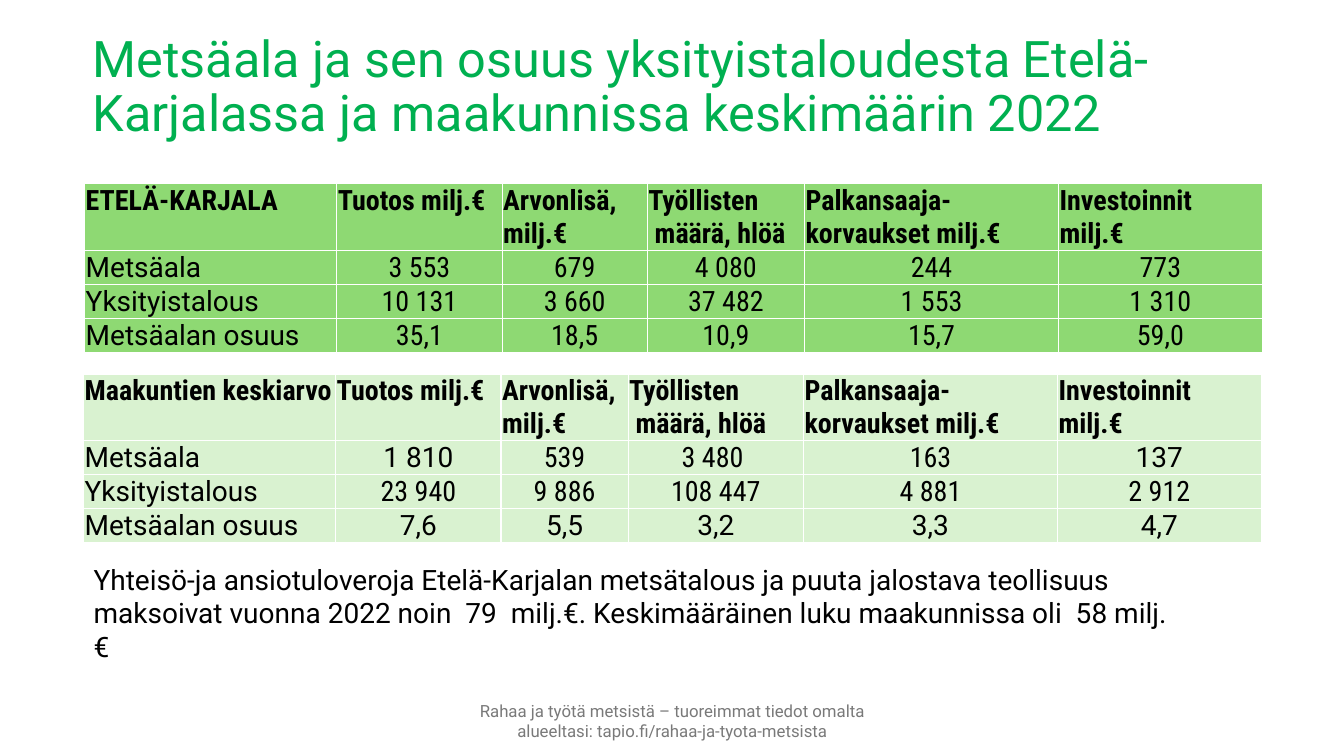
from lxml.etree import SubElement
from pptx import Presentation
from pptx.dml.color import RGBColor
from pptx.enum.text import MSO_ANCHOR, MSO_AUTO_SIZE, PP_ALIGN
from pptx.oxml.ns import qn
from pptx.util import Inches, Pt

COLORS = {
    "title": "00B050",
    "text": "000000",
    "footer": "797979",
    "border": "FFFFFF",
    "region": "8ED973",
    "average": "D9F2D0",
}
REGULAR = "Roboto"
CONDENSED = "Roboto Condensed"

HEADINGS = ["Tuotos milj.€", "Arvonlisä, milj.€", "Työllisten\n määrä, hlöä",
            "Palkansaaja-korvaukset milj.€", "Investoinnit\nmilj.€"]
REGION_ROWS = [
    ["ETELÄ-KARJALA", *HEADINGS],
    ["Metsäala", "3 553", "679", "4 080", "244", "773"],
    ["Yksityistalous", "10 131", "3 660", "37 482", "1 553", "1 310"],
    ["Metsäalan osuus", "35,1", "18,5", "10,9", "15,7", "59,0"],
]
AVERAGE_ROWS = [
    ["Maakuntien keskiarvo", *HEADINGS],
    ["Metsäala", "1 810", "539", "3 480 ", "163", "137"],
    ["Yksityistalous", "23 940", "9 886", "108 447", "4 881", "2 912"],
    ["Metsäalan osuus", "7,6", "5,5", "3,2", "3,3", "4,7"],
]
# Value cells (row, column) set in the regular width
AVERAGE_REGULAR = {(1, 1), (1, 5)} | {(3, column) for column in range(1, 6)}


class SlideBuilder:
    """Holds the style and the current slide."""

    def __init__(self, presentation):
        self.slide = presentation.slides.add_slide(presentation.slide_layouts[5])

    def fill_text(self, frame, text, color, size=20, name=REGULAR, bold=False,
                  **paragraph_format):
        frame.text = text
        font_format = {"size": Pt(size), "name": name, "bold": bold}
        for paragraph in frame.paragraphs:
            for key, value in paragraph_format.items():
                setattr(paragraph, key, value)
            for run in paragraph.runs:
                for key, value in font_format.items():
                    setattr(run.font, key, value)
                run.font.color.rgb = RGBColor.from_string(COLORS[color])

    def place(self, shape, left, top, width, height):
        position = {"left": left, "top": top, "width": width, "height": height}
        for key, value in position.items():
            setattr(shape, key, Inches(value))

    def title(self, text, box):
        shape = self.slide.shapes.title
        self.place(shape, *box)
        frame = shape.text_frame
        self.fill_text(frame, text, "title", size=36, alignment=PP_ALIGN.LEFT,
                       line_spacing=0.9)
        frame_format = {"word_wrap": True, "auto_size": MSO_AUTO_SIZE.NONE,
                        "vertical_anchor": MSO_ANCHOR.MIDDLE}
        for key, value in frame_format.items():
            setattr(frame, key, value)

    def text(self, text, box, color, size=20, alignment=PP_ALIGN.LEFT,
             anchor=MSO_ANCHOR.TOP):
        shape = self.slide.shapes.add_textbox(*map(Inches, box))
        frame = shape.text_frame
        frame.word_wrap = True
        frame.vertical_anchor = anchor
        self.fill_text(frame, text, color, size=size, alignment=alignment)

    def border(self, cell):
        properties = cell._tc.get_or_add_tcPr()
        for side in ("lnL", "lnR", "lnT", "lnB"):
            line = SubElement(properties, qn(f"a:{side}"), w=str(Pt(1)))
            fill = SubElement(line, qn("a:solidFill"))
            SubElement(fill, qn("a:srgbClr"), val=COLORS["border"])

    def cell(self, cell, text, fill, **text_format):
        self.border(cell)
        cell.fill.solid()
        cell.fill.fore_color.rgb = RGBColor.from_string(COLORS[fill])
        margins = {"margin_left": 0.01, "margin_top": 0.01,
                   "margin_right": 0.01, "margin_bottom": 0}
        for key, value in margins.items():
            setattr(cell, key, Inches(value))
        self.fill_text(cell.text_frame, text, "text", **text_format)

    def table(self, rows, left, top, widths, fill, regular_cells=frozenset()):
        heights = [0.66] + [0.33] * (len(rows) - 1)
        table = self.slide.shapes.add_table(
            len(rows), len(widths), Inches(left), Inches(top),
            Inches(sum(widths)), Inches(sum(heights))).table
        table.first_row = table.horz_banding = False
        for column, width in zip(table.columns, widths):
            column.width = Inches(width)
        for row, height in zip(table.rows, heights):
            row.height = Inches(height)
        for i, values in enumerate(rows):
            for j, value in enumerate(values):
                cell = table.cell(i, j)
                is_header, is_label = i == 0, j == 0
                is_regular = (i, j) in regular_cells or (is_label and not is_header)
                cell.vertical_anchor = MSO_ANCHOR.TOP if is_header else MSO_ANCHOR.BOTTOM
                self.cell(
                    cell, value, fill, bold=is_header,
                    name=REGULAR if is_regular else CONDENSED,
                    alignment=PP_ALIGN.LEFT if is_header or is_label else PP_ALIGN.CENTER)


def main():
    presentation = Presentation()
    presentation.slide_width = Inches(13.33)
    presentation.slide_height = Inches(7.5)
    builder = SlideBuilder(presentation)

    # Title
    builder.title("Metsäala ja sen osuus yksityistaloudesta Etelä-Karjalassa "
                  "ja maakunnissa keskimäärin 2022", (0.82, 0.15, 12.19, 1.45))

    # Region and average of the regions
    builder.table(REGION_ROWS, 0.84, 1.82, [2.5, 1.64, 1.44, 1.56, 2.52, 2.02], "region")
    builder.table(AVERAGE_ROWS, 0.83, 3.71, [2.5, 1.64, 1.26, 1.74, 2.52, 2.02],
                  "average", AVERAGE_REGULAR)

    # Tax summary
    builder.text("Yhteisö-ja ansiotuloveroja Etelä-Karjalan metsätalous ja puuta "
                 "jalostava teollisuus maksoivat vuonna 2022 noin  79  milj.€. "
                 "Keskimääräinen luku maakunnissa oli  58 milj.€",
                 (0.83, 5.53, 10.9, 0.77), "text")

    # Footer
    builder.text("Rahaa ja työtä metsistä – tuoreimmat tiedot omalta alueeltasi: "
                 "tapio.fi/rahaa-ja-tyota-metsista", (4.32, 6.95, 4.7, 0.4), "footer",
                 size=12, alignment=PP_ALIGN.CENTER, anchor=MSO_ANCHOR.MIDDLE)

    presentation.save("out.pptx")


if __name__ == "__main__":
    main()
